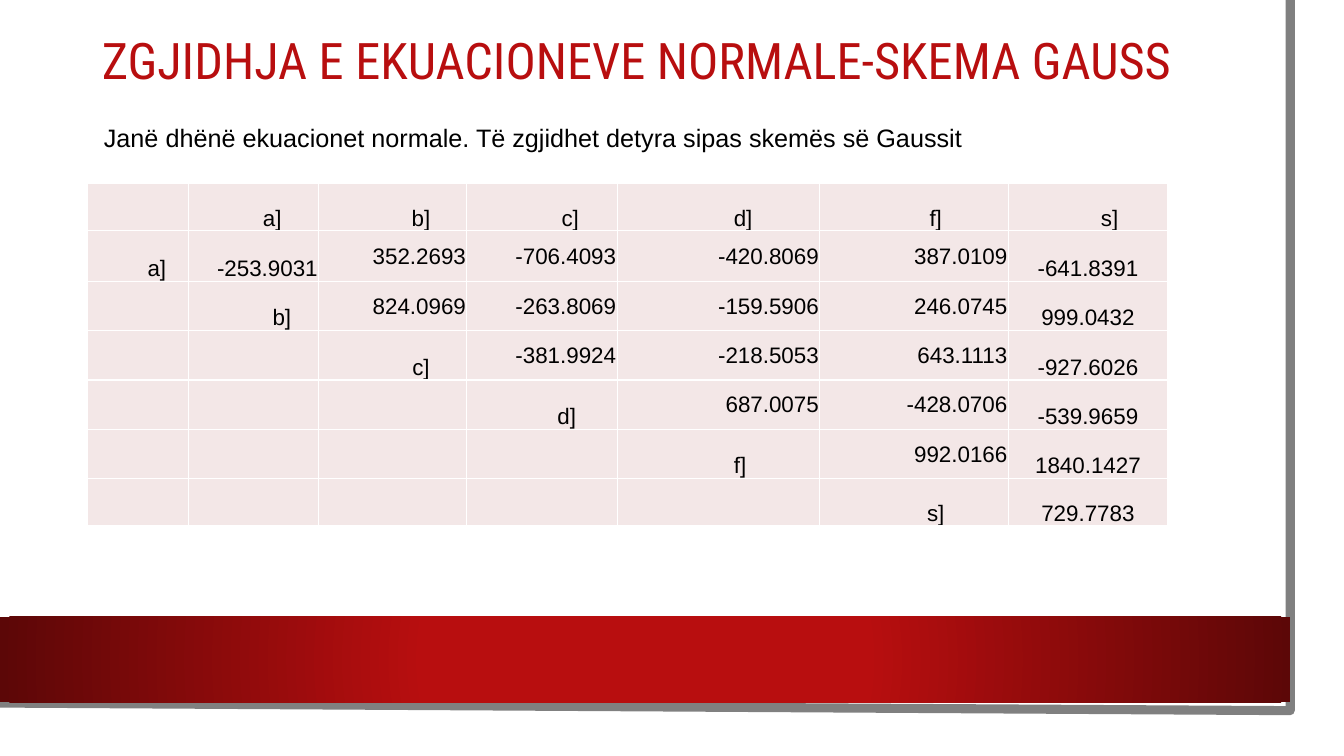
from lxml import etree
from pptx import Presentation
from pptx import util as u
from pptx.dml.color import RGBColor
from pptx.enum import shapes, text
from pptx.oxml import ns

RED = RGBColor(0xB8, 0x0E, 0x0F)
DARK_RED = RGBColor(0x5C, 0x07, 0x07)
GREY = RGBColor(0x80, 0x80, 0x80)
ROSE = RGBColor(0xF3, 0xE7, 0xE7)
WHITE = RGBColor(0xFF, 0xFF, 0xFF)
BLACK = RGBColor(0, 0, 0)

ALIGN, ANCHOR = text.PP_ALIGN, text.MSO_ANCHOR
RECTANGLE = shapes.MSO_SHAPE.RECTANGLE

presentation = Presentation()
presentation.slide_width = u.Inches(13.33)
presentation.slide_height = u.Inches(7.5)
# The grid has 100 columns and 100 rows
COLUMN = presentation.slide_width / 100
ROW = presentation.slide_height / 100


def box(left, top, width, height):
    return [u.Emu(round(length * unit)) for length, unit in
            zip((left, top, width, height), (COLUMN, ROW, COLUMN, ROW))]


def write(frame, words, size=16, font="Arial", color=BLACK, align=ALIGN.LEFT, spacing=None):
    paragraph = frame.paragraphs[0]
    paragraph.text = words
    paragraph.alignment = align
    paragraph.line_spacing = spacing
    paragraph.font.size = u.Pt(size)
    paragraph.font.name = font
    paragraph.font.color.rgb = color
    paragraph.font.bold = False


slide = presentation.slides.add_slide(presentation.slide_layouts[5])

# White sheet with a grey edge on the right and at the bottom
sheet = slide.shapes.add_shape(RECTANGLE, *box(0, 0, 98.27, 96.93))
sheet.shadow.inherit = False
sheet.fill.solid()
sheet.fill.fore_color.rgb = WHITE
sheet.line.fill.background()

outline = slide.shapes.build_freeform(96.17, 0, scale=(COLUMN, ROW))
outline.add_line_segments([(96.4, 93.6), (-0.23, 93.47)], close=False)
edge = outline.convert_to_shape()
edge.shadow.inherit = False
edge.fill.background()
edge.line.color.rgb = GREY
edge.line.width = u.Pt(6.5)

# Red band, darker away from its centre
band = slide.shapes.add_shape(RECTANGLE, *box(0, 81.6, 96.02, 11.33))
band.shadow.inherit = False
band.line.fill.background()
band.fill.gradient()
for stop, position, color in zip(band.fill.gradient_stops, (0.34, 1), (RED, DARK_RED)):
    stop.position = position
    stop.color.rgb = color
gradient = band._element.spPr.find(ns.qn("a:gradFill"))
gradient.remove(gradient.find(ns.qn("a:lin")))
circle = etree.SubElement(gradient, ns.qn("a:path"), path="circle")
etree.SubElement(circle, ns.qn("a:fillToRect"), l="50000", t="50000", r="50000", b="50000")

# Title, brought in front of the sheet
title = slide.shapes.title
slide.shapes._spTree.append(title._element)
title.left, title.top, title.width, title.height = box(4.73, 0, 85.3, 16.8)
title.text_frame.vertical_anchor = ANCHOR.MIDDLE
write(title.text_frame, "ZGJIDHJA E EKUACIONEVE NORMALE-SKEMA GAUSS", size=36,
      font="Roboto Condensed", color=RED, align=ALIGN.CENTER, spacing=0.9)

# Task
task = slide.shapes.add_textbox(*box(6.53, 15.47, 81.62, 5.33)).text_frame
task.word_wrap = True
task.margin_left = u.Inches(0.16)
write(task, "Janë dhënë ekuacionet normale. Të zgjidhet detyra sipas skemës së Gaussit", size=18)

# Upper triangle of the normal equations: each row ends in the last column
equations = [
    ["a]", "b]", "c]", "d]", "f]", "s]"],
    ["a]", "-253.9031", "352.2693", "-706.4093", "-420.8069", "387.0109", "-641.8391"],
    ["b]", "824.0969", "-263.8069", "-159.5906", "246.0745", "999.0432"],
    ["c]", "-381.9924", "-218.5053", "643.1113", "-927.6026"],
    ["d]", "687.0075", "-428.0706", "-539.9659"],
    ["f]", "992.0166", "1840.1427"],
    ["s]", "729.7783"],
]
column_widths = [7.5, 9.68, 11.03, 11.18, 15.08, 14.03, 11.85]
row_heights = [6.27, 6.67, 6.53, 6.53, 6.53, 6.53, 6.27]
label_indents = {"a]": 0.37, "b]": 0.56, "c]": 0.56, "d]": 0.49, "f]": 0.43, "s]": 0.43}

table = slide.shapes.add_table(7, 7, *box(6.53, 24.27, 80.35, 45.07)).table
table.first_row = table.horz_banding = False
for column, width in zip(table.columns, column_widths):
    column.width = u.Emu(round(width * COLUMN))
for row, height in zip(table.rows, row_heights):
    row.height = u.Emu(round(height * ROW))

for cell in table.iter_cells():
    properties = cell._tc.get_or_add_tcPr()
    for side in ("a:lnL", "a:lnR", "a:lnT", "a:lnB"):
        border = etree.SubElement(properties, ns.qn(side), w=str(u.Pt(1)))
        fill = etree.SubElement(border, ns.qn("a:solidFill"))
        etree.SubElement(fill, ns.qn("a:srgbClr"), val=str(WHITE))
    cell.fill.solid()
    cell.fill.fore_color.rgb = ROSE

for row_index, entries in enumerate(equations):
    for column_index, entry in enumerate(entries, start=7 - len(entries)):
        cell = table.cell(row_index, column_index)
        centred = entry in label_indents or column_index == 6
        low = centred or column_index == 1
        cell.vertical_anchor = ANCHOR.BOTTOM if low else ANCHOR.MIDDLE
        cell.margin_left = u.Inches(0.01 + label_indents.get(entry, 0))
        cell.margin_top = cell.margin_right = u.Inches(0.01)
        cell.margin_bottom = 0
        write(cell.text_frame, entry, align=ALIGN.CENTER if centred else ALIGN.RIGHT)

presentation.save("out.pptx")
